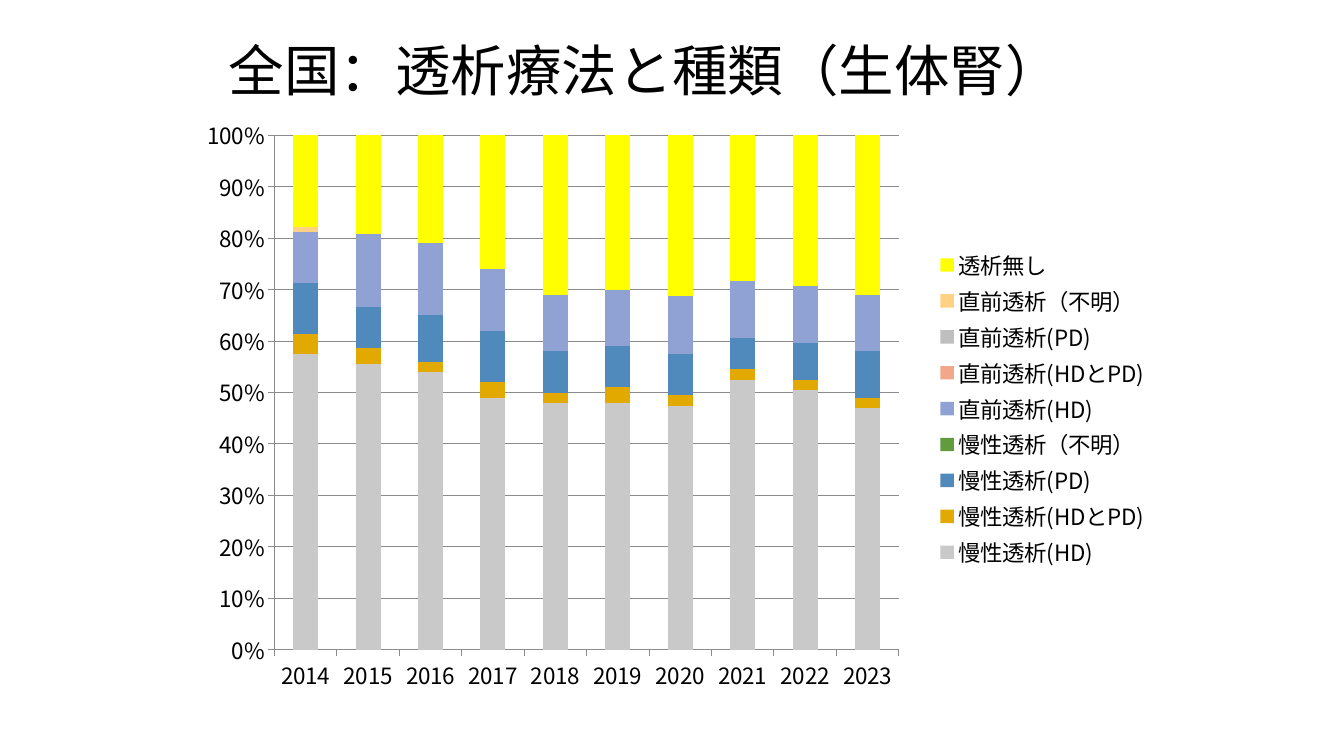
from lxml import etree
from pptx import Presentation
from pptx.chart.data import CategoryChartData
from pptx.dml.color import RGBColor
from pptx.enum import chart as ch, text
from pptx.oxml import parse_xml
from pptx.oxml.ns import nsdecls, qn
from pptx.util import Inches, Pt

FONT = "Noto Sans CJK JP"
COLORS = {
    "text": "000000",
    "line": "8B8B8B",
    "慢性透析(HD)": "C9C9C9",
    "慢性透析(HDとPD)": "E2AA00",
    "慢性透析(PD)": "5089BC",
    "慢性透析（不明）": "629A3E",
    "直前透析(HD)": "90A2D4",
    "直前透析(HDとPD)": "F1A78A",
    "直前透析(PD)": "BFBFBF",
    "直前透析（不明）": "FFD184",
    "透析無し": "FFFF00",
}
SHARES = {
    "慢性透析(HD)": [58, 55, 54, 49, 48, 48, 47, 52, 50, 47],
    "慢性透析(HDとPD)": [4, 3, 2, 3, 2, 3, 2, 2, 2, 2],
    "慢性透析(PD)": [10, 8, 9, 10, 8, 8, 8, 6, 7, 9],
    "慢性透析（不明）": [0] * 10,
    "直前透析(HD)": [10, 14, 14, 12, 11, 11, 11, 11, 11, 11],
    "直前透析(HDとPD)": [0] * 10,
    "直前透析(PD)": [0] * 10,
    "直前透析（不明）": [1] + [0] * 9,
    "透析無し": [18, 19, 21, 26, 31, 30, 31, 28, 29, 31],
}


def set_font(font, size):
    font.size = Pt(size)
    font.bold = False
    font.color.rgb = RGBColor.from_string(COLORS["text"])
    font.name = FONT
    etree.SubElement(font._element, qn("a:ea"), typeface=FONT)


def layout_xml(target, x, y, w, h):
    inner = f'<c:layoutTarget val="{target}"/>' if target else ""
    return parse_xml(
        f'<c:layout {nsdecls("c")}><c:manualLayout>{inner}'
        '<c:xMode val="edge"/><c:yMode val="edge"/>'
        f'<c:x val="{x}"/><c:y val="{y}"/><c:w val="{w}"/><c:h val="{h}"/>'
        '</c:manualLayout></c:layout>')


prs = Presentation()
prs.slide_width, prs.slide_height = Inches(13.33), Inches(7.5)
s = prs.slides.add_slide(prs.slide_layouts[5])

title = s.shapes.title
title.left, title.top = Inches(2.17), Inches(0.1)
title.width, title.height = Inches(9), Inches(1.25)
tf = title.text_frame
tf.text = "全国：透析療法と種類（生体腎）"
tf.vertical_anchor = text.MSO_ANCHOR.MIDDLE
p = tf.paragraphs[0]
p.alignment = text.PP_ALIGN.LEFT
p.line_spacing = 0.9
set_font(p.font, 39.6)

data = CategoryChartData(number_format="0")
data.categories = [str(year) for year in range(2014, 2024)]
for name, values in SHARES.items():
    data.add_series(name, values)
chart = s.shapes.add_chart(
    ch.XL_CHART_TYPE.COLUMN_STACKED_100, Inches(1.86), Inches(1.07),
    Inches(9.69), Inches(5.91), data).chart
chart.has_title = False
set_font(chart.font, 16)

plot = chart.plots[0]
plot.gap_width = 150
plot.overlap = 100
plot.vary_by_categories = False
for series in plot.series:
    series.format.fill.solid()
    series.format.fill.fore_color.rgb = RGBColor.from_string(COLORS[series.name])

value_axis, category_axis = chart.value_axis, chart.category_axis
value_axis.has_major_gridlines = True
value_axis.minimum_scale, value_axis.maximum_scale = 0, 1
value_axis.major_unit = 0.1
value_axis.tick_labels.number_format = "0%"
value_axis.tick_labels.number_format_is_linked = False
for axis in (value_axis, category_axis):
    axis.major_tick_mark = ch.XL_TICK_MARK.OUTSIDE
for part in (value_axis, category_axis, value_axis.major_gridlines):
    part.format.line.width = Pt(0.75)
    part.format.line.color.rgb = RGBColor.from_string(COLORS["line"])

chart.has_legend = True
legend = chart.legend
legend.position = ch.XL_LEGEND_POSITION.RIGHT
legend.include_in_layout = False
legend_pos = legend._element.find(qn("c:legendPos"))
plot_area = chart._chartSpace.chart.plotArea
for parent in (legend._element, plot_area):
    for old in parent.findall(qn("c:layout")):
        parent.remove(old)
legend_pos.addnext(layout_xml("", 0.75, 0.23, 0.25, 0.55))
plot_area.insert(0, layout_xml("inner", 0.089, 0.046, 0.639, 0.864))

prs.save("out.pptx")
